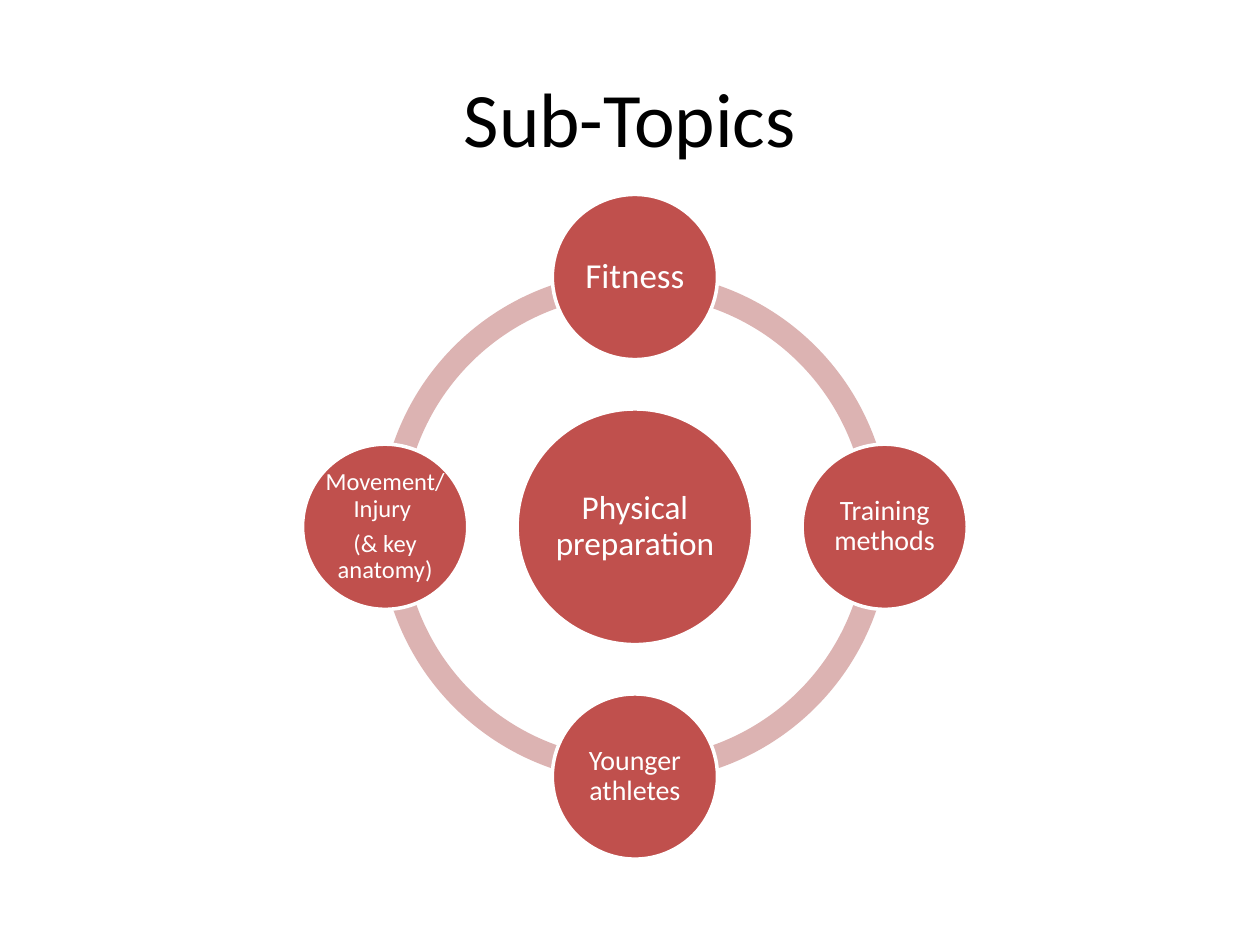
from math import cos, radians, sin

from pptx import Presentation
from pptx.dml.color import RGBColor
from pptx.enum.shapes import MSO_SHAPE as SHAPE
from pptx.enum.text import MSO_ANCHOR as ANCHOR, PP_ALIGN as ALIGN
from pptx.util import Cm, Pt

COLORS = {"disc": "C0504D", "ring": "DCB3B2", "white": "FFFFFF", "black": "000000"}
FONT = "Calibri"

CORE = (["Physical preparation"], 19, 0.08)
# Clockwise from the top: paragraphs, text size, inset in cm
TOPICS = [
    (["Fitness"], 20, 0.08),
    (["Training methods"], 16, 0.05),
    (["Younger athletes"], 16, 0.05),
    (["Movement/Injury ", "(& key anatomy)"], 14, 0.05),
]


def color(name):
    return RGBColor.from_string(COLORS[name])


def add_text(slide, box, paragraphs, size, ink, inset=(0.25, 0.13), **spacing):
    tf = slide.shapes.add_textbox(*map(Cm, box)).text_frame
    side, edge = map(Cm, inset)
    frame = {"word_wrap": True, "vertical_anchor": ANCHOR.MIDDLE,
             "margin_left": side, "margin_right": side,
             "margin_top": edge, "margin_bottom": edge}
    for name, value in frame.items():
        setattr(tf, name, value)
    for i, text in enumerate(paragraphs):
        p = tf.add_paragraph() if i else tf.paragraphs[0]
        for name, value in {"alignment": ALIGN.CENTER, **spacing}.items():
            setattr(p, name, value)
        r = p.add_run()
        r.text = text
        for name, value in {"name": FONT, "size": Pt(size)}.items():
            setattr(r.font, name, value)
        r.font.color.rgb = color(ink)


def add_shape(slide, kind, box, fill):
    sp = slide.shapes.add_shape(kind, *map(Cm, box))
    sp.shadow.inherit = False
    sp.fill.solid()
    sp.fill.fore_color.rgb = color(fill)
    sp.line.fill.background()
    return sp


def square(cx, cy, size):
    return cx - size / 2, cy - size / 2, size, size


def add_disc(slide, box, paragraphs, size, inset):
    sp = add_shape(slide, SHAPE.OVAL, box, "disc")
    sp.line.color.rgb = color("white")
    sp.line.width = Pt(2)
    add_text(slide, box, paragraphs, size, "white", (inset, inset),
             line_spacing=0.9, space_after=Pt(size * 0.35))


def add_radial(slide, left, top, side):
    cx, cy = left + side / 2, top + side / 2
    disc, core, ring = 3.33, 4.75, 10.3
    orbit = (side - disc) / 2

    # Ring of arcs; a full turn is 216 adjustment units
    step = 216 / len(TOPICS)
    for i in range(len(TOPICS)):
        arc = add_shape(slide, SHAPE.BLOCK_ARC, square(cx, cy, ring), "ring")
        for j, value in enumerate((i * step, (i + 1) * step % 216, 0.046)):
            arc.adjustments[j] = value

    # Centre and the topics around it
    add_disc(slide, square(cx, cy, core), *CORE)
    for i, topic in enumerate(TOPICS):
        angle = radians(360 / len(TOPICS) * i - 90)
        x, y = cx + orbit * cos(angle), cy + orbit * sin(angle)
        add_disc(slide, square(x, y, disc), *topic)


def main():
    prs = Presentation()
    prs.slide_width, prs.slide_height = Cm(25.4), Cm(19.05)
    slide = prs.slides.add_slide(prs.slide_layouts[6])
    add_text(slide, (1.27, 0.76, 22.86, 3.18), ["Sub-Topics"], 44, "black")
    add_radial(slide, 6.1, 3.92, 13.4)
    prs.save("out.pptx")


if __name__ == "__main__":
    main()
